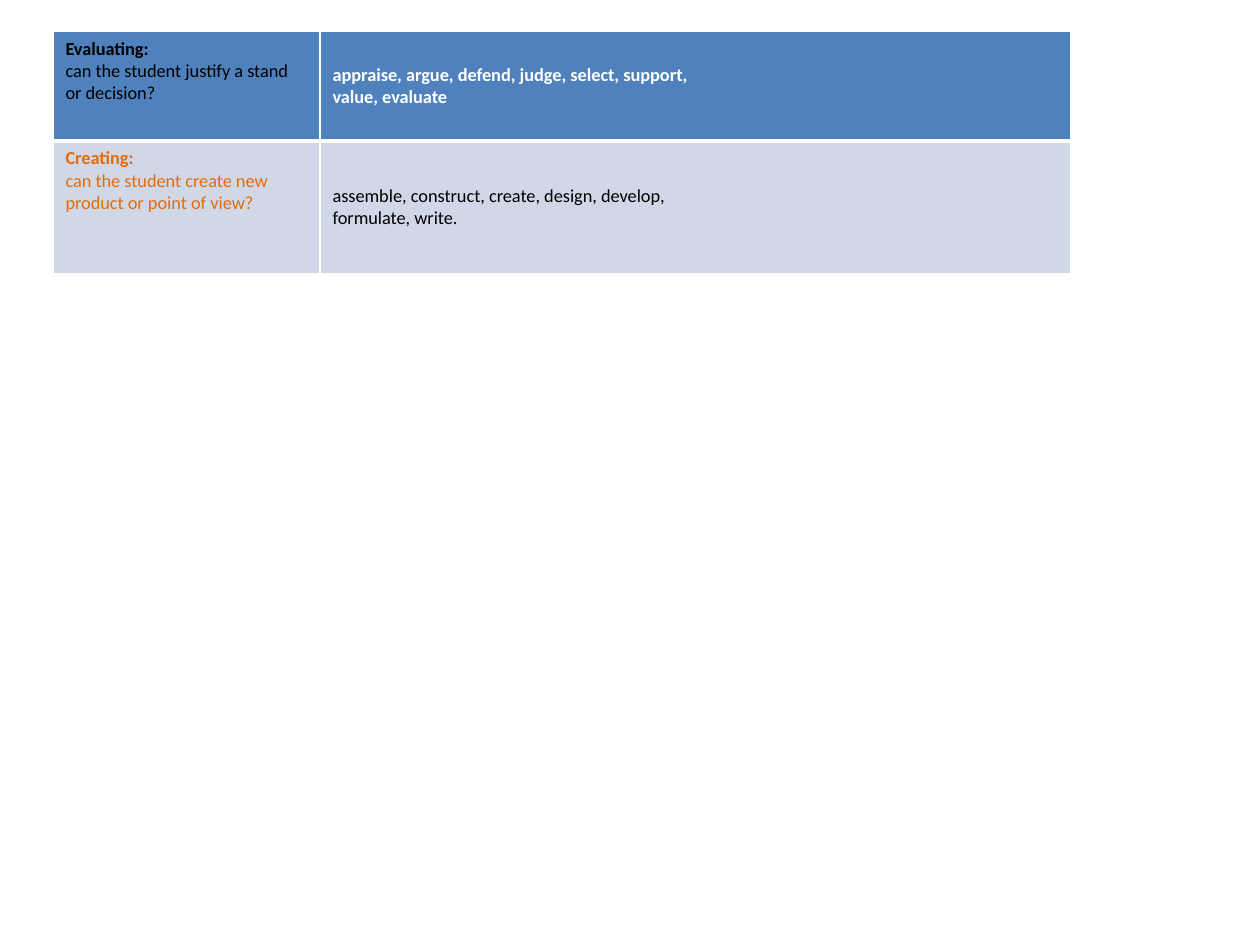
"""Build a slide with a table of thinking levels and their verbs."""
from dataclasses import dataclass

from lxml.etree import SubElement
from pptx import Presentation
from pptx.dml.color import RGBColor as RGB
from pptx.enum.text import MSO_ANCHOR as Anchor
from pptx.oxml.ns import qn
from pptx.util import Pt

COLORS = {
    "white": "FFFFFF",
    "black": "000000",
    "orange": "E46C0A",
    "blue": "4F81BD",
    "pale": "D0D8E8",
}
COL_WIDTHS = (152.64, 429.12)
THIN, THICK = 1, 3


@dataclass
class Level:
    name: str
    question: str
    verbs: tuple[str, ...]
    height: float
    fill: str
    level_color: str
    verb_color: str
    verb_bold: bool
    top: float
    bottom: float


LEVELS = (
    Level("Evaluating:", "can the student justify a stand or decision?",
          ("appraise, argue, defend, judge, select, support,", "value, evaluate"),
          62.64, "blue", "black", "white", True, THIN, THICK),
    Level("Creating:", "can the student create new product or point of view?",
          ("assemble, construct, create, design, develop,", "formulate, write."),
          75.6, "pale", "orange", "black", False, THICK, THIN),
)


def write(p, text: str, *, color: str, bold: bool = False, size: float = 10.5) -> None:
    """Add a formatted run to a paragraph."""
    r = p.add_run()
    r.text = text
    r.font.name = "Calibri"
    r.font.size = Pt(size)
    r.font.bold = bold
    r.font.color.rgb = RGB.from_string(COLORS[color])


def style_cell(cell, level: Level) -> None:
    """Give a cell its white borders and its fill."""
    tc_pr = cell._tc.get_or_add_tcPr()
    edges = {"lnL": THIN, "lnR": THIN, "lnT": level.top, "lnB": level.bottom}
    for tag, width in edges.items():
        ln = SubElement(tc_pr, qn(f"a:{tag}"), w=str(Pt(width)))
        fill = SubElement(ln, qn("a:solidFill"))
        SubElement(fill, qn("a:srgbClr"), val=COLORS["white"])
    cell.fill.solid()
    cell.fill.fore_color.rgb = RGB.from_string(COLORS[level.fill])


def fill_row(cells, level: Level) -> None:
    """Write one level and its verbs into a table row."""
    for cell in cells:
        style_cell(cell, level)
    left, right = cells
    tf = left.text_frame
    write(tf.paragraphs[0], level.name, color=level.level_color, bold=True)
    write(tf.add_paragraph(), level.question, color=level.level_color)
    right.vertical_anchor = Anchor.MIDDLE
    tf = right.text_frame
    for i, line in enumerate(level.verbs):
        p = tf.add_paragraph() if i else tf.paragraphs[0]
        write(p, line, color=level.verb_color, bold=level.verb_bold)


def main() -> None:
    """Create and save the presentation."""
    prs = Presentation()
    prs.slide_width, prs.slide_height = Pt(720), Pt(540)
    s = prs.slides.add_slide(prs.slide_layouts[6])
    height = sum(level.height for level in LEVELS)
    table = s.shapes.add_table(len(LEVELS), len(COL_WIDTHS), Pt(30.24), Pt(18),
                               Pt(sum(COL_WIDTHS)), Pt(height)).table
    for column, width in zip(table.columns, COL_WIDTHS):
        column.width = Pt(width)
    for row, level in zip(table.rows, LEVELS):
        row.height = Pt(level.height)
        fill_row(tuple(row.cells), level)
    prs.save("out.pptx")


if __name__ == "__main__":
    main()
